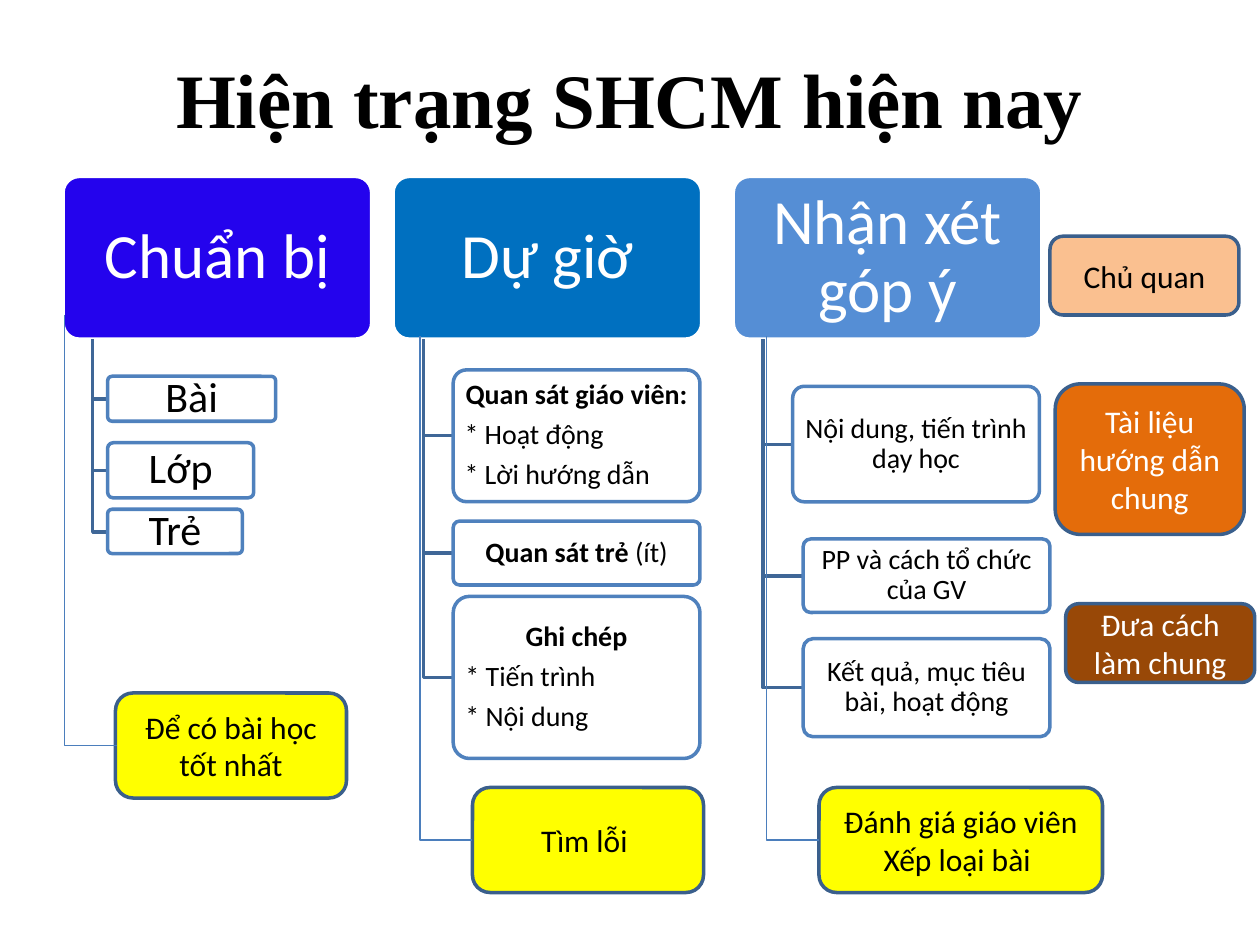
from lxml.etree import SubElement
from pptx import Presentation
from pptx.dml.color import RGBColor
from pptx.enum.shapes import MSO_CONNECTOR, MSO_SHAPE
from pptx.enum.text import MSO_ANCHOR, PP_ALIGN
from pptx.oxml.ns import qn
from pptx.util import Pt

BLACK = RGBColor(0x00, 0x00, 0x00)
WHITE = RGBColor(0xFF, 0xFF, 0xFF)
INDIGO = RGBColor(0x24, 0x03, 0xED)
BLUE = RGBColor(0x00, 0x70, 0xC0)
SKY = RGBColor(0x55, 0x8E, 0xD5)
YELLOW = RGBColor(0xFF, 0xFF, 0x00)
PEACH = RGBColor(0xFA, 0xC0, 0x90)
ORANGE = RGBColor(0xE4, 0x6C, 0x0A)
BROWN = RGBColor(0x98, 0x48, 0x07)
ITEM_EDGE = RGBColor(0x4F, 0x81, 0xBD)
BRANCH = RGBColor(0x3F, 0x67, 0x97)
NOTE_EDGE = RGBColor(0x3A, 0x5F, 0x8C)
THIN_LINK = RGBColor(0x4B, 0x7E, 0xBC)

HEADER_TOP, HEADER_WIDTH, HEADER_HEIGHT = 100.8, 176.4, 93
BRANCH_TOP = HEADER_TOP + HEADER_HEIGHT
TRUNK_INDENT = 17.4


def write_lines(shape, lines, size, color, font="Calibri", tight=False):
    """Fill a shape with paragraphs; text before a bar is bold, starred lines go left."""
    frame = shape.text_frame
    frame.word_wrap = True
    frame.vertical_anchor = MSO_ANCHOR.MIDDLE
    for index, line in enumerate(lines):
        paragraph = frame.paragraphs[0] if index == 0 else frame.add_paragraph()
        paragraph.alignment = PP_ALIGN.LEFT if line.startswith("*") else PP_ALIGN.CENTER
        if tight:
            paragraph.line_spacing = 0.9
            paragraph.space_after = Pt(0.35 * size)
        bold_text, _, plain_text = line.rpartition("|")
        for text, bold in ((bold_text, True), (plain_text, False)):
            if text:
                span = paragraph.add_run()
                span.text = text
                span.font.name = font
                span.font.size = Pt(size)
                span.font.bold = bold
                span.font.color.rgb = color


def add_box(place, fill, edge, corner=None, insets=None):
    box = page.shapes.add_shape(MSO_SHAPE.ROUNDED_RECTANGLE, *map(Pt, place))
    box.shadow.inherit = False
    box.fill.solid()
    box.fill.fore_color.rgb = fill
    box.line.color.rgb = edge
    box.line.width = Pt(2)
    if corner:
        box.adjustments[0] = corner
    if insets:
        frame = box.text_frame
        frame.margin_left = frame.margin_right = Pt(insets[0])
        frame.margin_top = frame.margin_bottom = Pt(insets[1])
    return box


deck = Presentation()
deck.slide_width, deck.slide_height = Pt(720), Pt(540)
page = deck.slides.add_slide(deck.slide_layouts[6])

# Header: left, fill, text; items: left, top, width, height, size, lines
columns = [
    (36, INDIGO, "Chuẩn bị", [
        (61.5, 215, 96, 25.7, 24, ["Bài"]),
        (61.5, 253, 83.5, 31.5, 24, ["Lớp"]),
        (61.5, 291, 77, 25.3, 24, ["Trẻ"]),
    ]),
    (224.6, BLUE, "Dự giờ", [
        (259, 211.4, 141, 75.3, 16,
         ["Quan sát giáo viên:|", "* Hoạt động", "* Lời hướng dẫn"]),
        (259, 297.8, 141, 36.5, 16, ["Quan sát trẻ |(ít)"]),
        (259, 340.8, 141, 92.6, 16, ["Ghi chép|", "* Tiến trình", "* Nội dung"]),
    ]),
    (419, SKY, "Nhận xét góp ý", [
        (453, 220.8, 141, 66, 16, ["Nội dung, tiến trình dạy học"]),
        (459, 308, 141, 42, 16, ["PP và cách tổ chức của GV"]),
        (459, 365, 141, 56, 16, ["Kết quả, mục tiêu bài, hoạt động"]),
    ]),
]
for header_left, header_fill, heading, items in columns:
    header = add_box((header_left, HEADER_TOP, HEADER_WIDTH, HEADER_HEIGHT),
                     header_fill, WHITE, 0.1, (8, 6))
    write_lines(header, [heading], 36, WHITE, tight=True)
    trunk = header_left + TRUNK_INDENT
    for left, top, width, height, size, lines in items:
        middle = top + height / 2
        outline = page.shapes.build_freeform(trunk, BRANCH_TOP, scale=Pt(1))
        outline.add_line_segments([(trunk, middle), (left, middle)], close=False)
        branch = outline.convert_to_shape()
        branch.shadow.inherit = False
        branch.fill.background()
        branch.line.color.rgb = BRANCH
        branch.line.width = Pt(2)
        item = add_box((left, top, width, height), WHITE, ITEM_EDGE, 0.1, (4.3, 3.5))
        write_lines(item, lines, size, BLACK, tight=True)

title = page.shapes.add_textbox(Pt(36), Pt(10.8), Pt(648), Pt(90))
write_lines(title, ["Hiện trạng SHCM hiện nay|"], 44, BLACK, "Times New Roman")

notes = [
    ((66, 396, 132, 60), YELLOW, BLACK, ["Để có bài học tốt nhất"]),
    ((270, 450, 132, 60), YELLOW, BLACK, ["Tìm lỗi "]),
    ((468, 450, 162, 60), YELLOW, BLACK, ["Đánh giá giáo viên", "Xếp loại bài "]),
    ((600, 135, 108, 45), PEACH, BLACK, ["Chủ quan"]),
    ((603, 219.4, 108, 86), ORANGE, WHITE, ["Tài liệu hướng dẫn chung"]),
    ((609, 345, 108, 45), BROWN, WHITE, ["Đưa cách làm chung"]),
]
for place, fill, color, lines in notes:
    write_lines(add_box(place, fill, NOTE_EDGE), lines, 18, color)

# Each elbow runs down, then right; its frame is laid out before a quarter turn.
for start_x, start_y, end_x, end_y in [
    (37, 180, 67, 426), (240, 192, 270, 480), (438, 192, 468, 480),
]:
    center_x, center_y = (start_x + end_x) / 2, (start_y + end_y) / 2
    half_length, half_reach = (end_y - start_y) / 2, (end_x - start_x) / 2
    link = page.shapes.add_connector(
        MSO_CONNECTOR.ELBOW,
        Pt(center_x + half_length), Pt(center_y - half_reach),
        Pt(center_x - half_length), Pt(center_y + half_reach))
    link.line.color.rgb = THIN_LINK
    link.line.width = Pt(0.75)
    properties = link._element.spPr
    properties.find(qn("a:xfrm")).set("rot", "16200000")
    properties.find(qn("a:prstGeom")).set("prst", "bentConnector2")
    SubElement(properties, qn("a:effectLst"))

deck.save("out.pptx")
